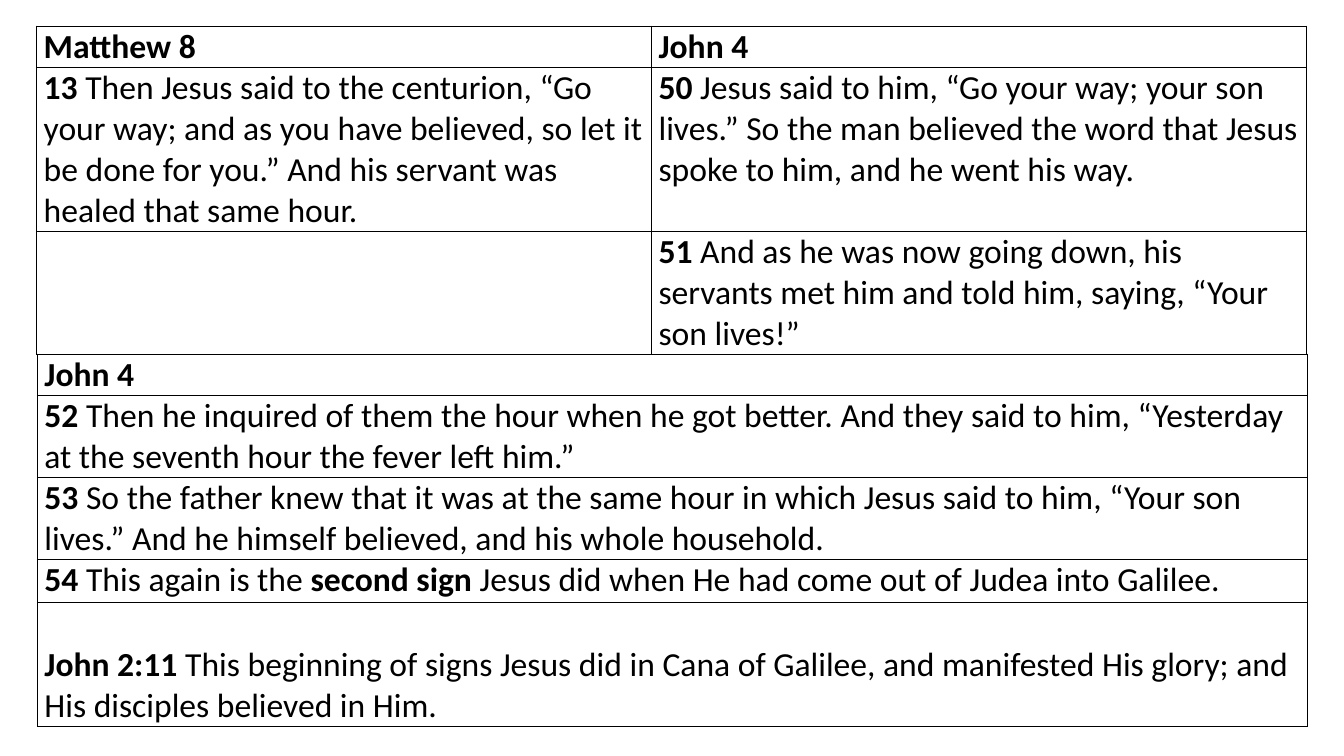
import pptx
import pptx.util
import pptx.dml.color
import pptx.enum.text
import pptx.oxml.ns
import lxml.etree

Pt = pptx.util.Pt
RGB = pptx.dml.color.RGBColor.from_string
anchors = pptx.enum.text.MSO_ANCHOR

theme = {"ink": "000000", "paper": "FFFFFF", "font": "Calibri", "size": 24, "rule": 1}
cell_format = {
    "margin_left": Pt(5.04),
    "margin_right": Pt(5.04),
    "margin_top": Pt(0),
    "margin_bottom": Pt(0),
}
verse_format = {"name": theme["font"], "size": Pt(theme["size"])}

passages = [
    {
        "at": (26.2, 18.7),
        "columns": [439.2, 468],
        "heights": [29.4, 117.2, 87.9],
        "verses": [
            ["**Matthew 8", "**John 4"],
            [
                "**13** Then Jesus said to the centurion, “Go your way; and as you have believed, "
                "so let it be done for you.” And his servant was healed that same hour.",
                "**50** Jesus said to him, “Go your way; your son lives.” So the man believed "
                "the word that Jesus spoke to him, and he went his way.",
            ],
            [
                "",
                "**51** And as he was now going down, his servants met him and told him, "
                "saying, “Your son lives!”",
            ],
        ],
    },
    {
        "at": (26.7, 253),
        "columns": [907.2],
        "heights": [29.3, 58.6, 58.6, 31, 88.2],
        "verses": [
            ["**John 4"],
            [
                "**52 **Then he inquired of them the hour when he got better. And they said "
                "to him, “Yesterday at the seventh hour the fever left him.”"
            ],
            [
                "**53** So the father knew that it was at the same hour in which Jesus said "
                "to him, “Your son lives.” And he himself believed, and his whole household."
            ],
            [
                "**54** This again is the **second sign **Jesus did when He had come out of "
                "Judea into Galilee."
            ],
            [
                "**John 2:11 **This beginning of signs Jesus did in Cana of Galilee, and "
                "manifested His glory; and His disciples believed in Him."
            ],
        ],
    },
]


def write_verse(cell, verse):
    paragraph = cell.text_frame.paragraphs[0]
    for position, words in enumerate(verse.split("**")):
        if words:
            run = paragraph.add_run()
            run.text = words
            for key, value in verse_format.items():
                setattr(run.font, key, value)
            run.font.bold = position % 2 == 1
            run.font.color.rgb = RGB(theme["ink"])


def rule_cell(cell):
    qn = pptx.oxml.ns.qn
    properties = cell._tc.get_or_add_tcPr()
    for index, side in enumerate(("a:lnL", "a:lnR", "a:lnT", "a:lnB")):
        edge = lxml.etree.Element(qn(side), w=str(Pt(theme["rule"])))
        ink = lxml.etree.SubElement(edge, qn("a:solidFill"))
        lxml.etree.SubElement(ink, qn("a:srgbClr"), val=theme["ink"])
        properties.insert(index, edge)


presentation = pptx.Presentation()
presentation.slide_width = Pt(960)
presentation.slide_height = Pt(540)
slide = presentation.slides.add_slide(presentation.slide_layouts[6])

for passage in passages:
    left, top = passage["at"]
    columns, heights = passage["columns"], passage["heights"]
    grid = slide.shapes.add_table(
        len(heights), len(columns), Pt(left), Pt(top), Pt(sum(columns)), Pt(sum(heights))
    ).table
    grid.first_row = False
    grid.horz_banding = False
    for column, width in zip(grid.columns, columns):
        column.width = Pt(width)
    for row, height, verses in zip(grid.rows, heights, passage["verses"]):
        row.height = Pt(height)
        for cell, verse in zip(row.cells, verses):
            for key, value in cell_format.items():
                setattr(cell, key, value)
            cell.fill.solid()
            cell.fill.fore_color.rgb = RGB(theme["paper"])
            write_verse(cell, verse)
            rule_cell(cell)

closing_verse = grid.cell(len(heights) - 1, 0)
closing_verse.vertical_anchor = anchors.BOTTOM

presentation.save("out.pptx")
